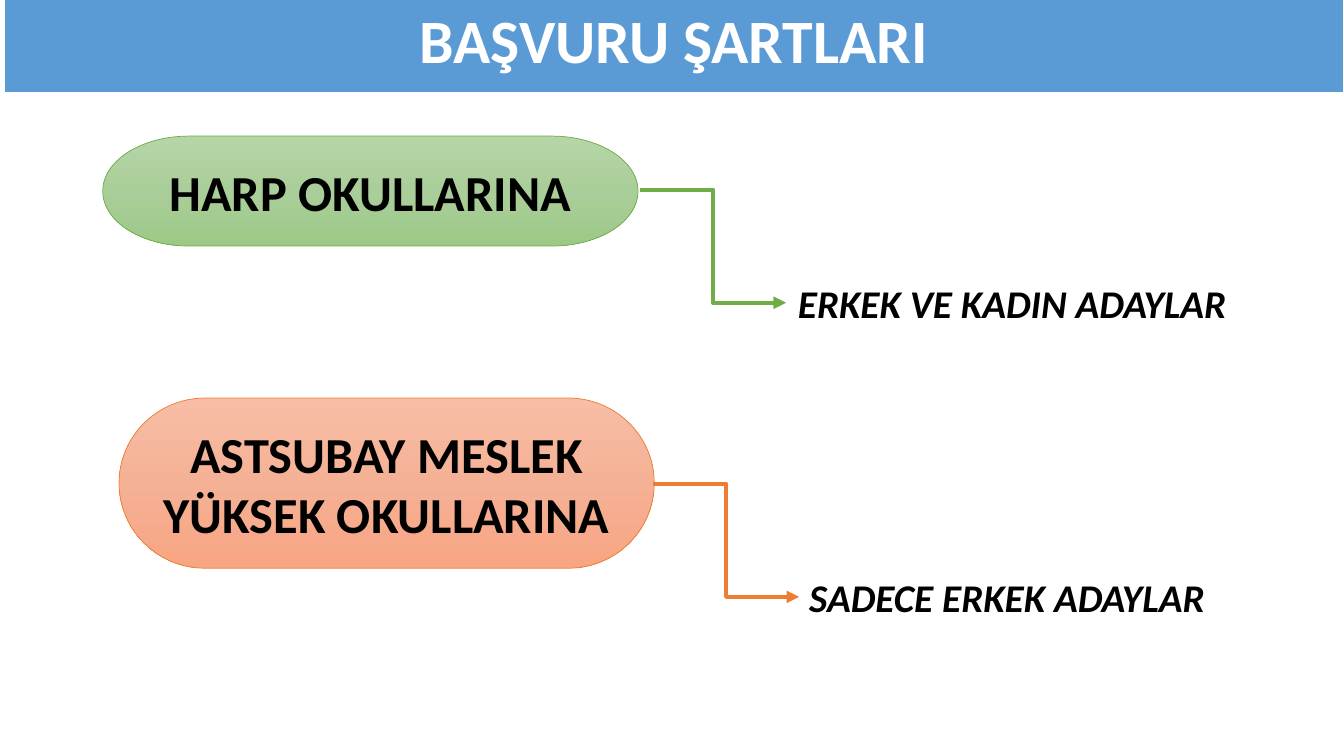
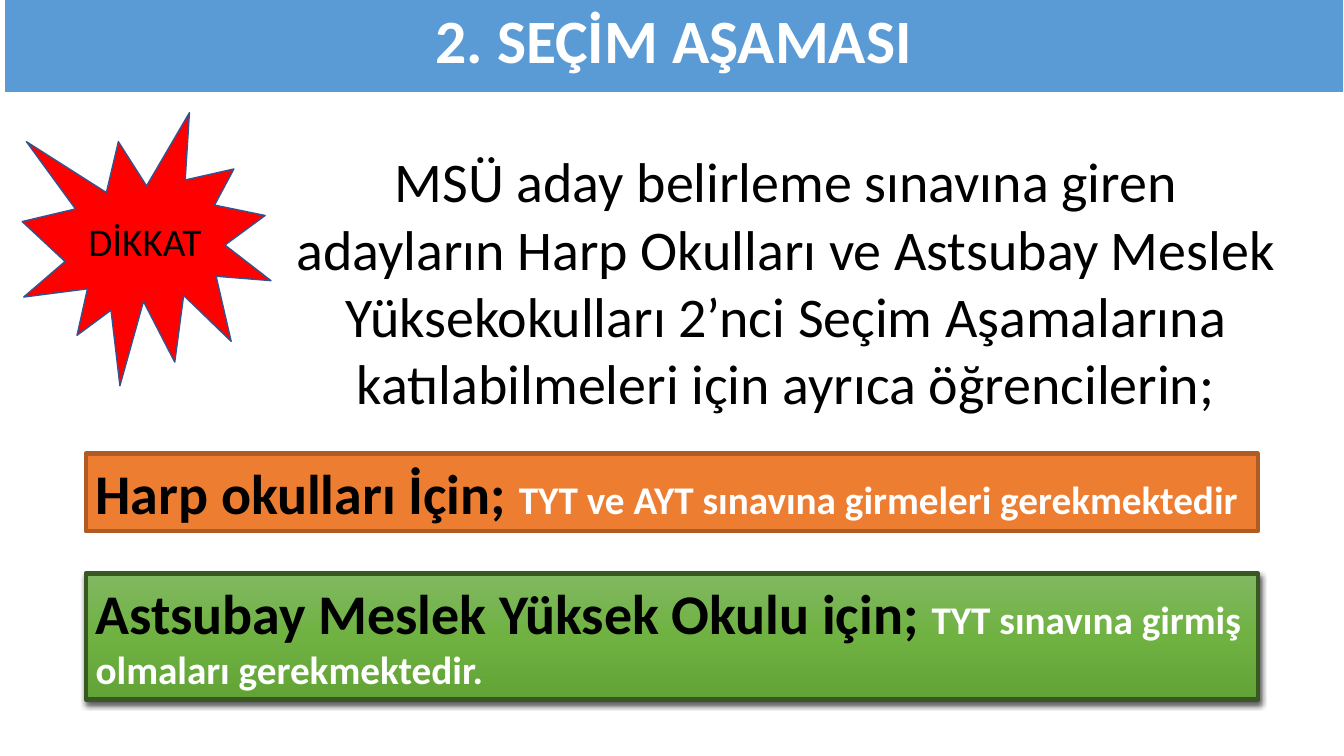
"""Builds two slides on the application terms and the second selection stage."""
from copy import deepcopy

from lxml.etree import SubElement
from pptx import Presentation
from pptx.dml.color import RGBColor
from pptx.enum.shapes import MSO_CONNECTOR, MSO_SHAPE
from pptx.enum.text import MSO_ANCHOR, MSO_AUTO_SIZE, PP_ALIGN
from pptx.oxml.ns import qn
from pptx.util import Cm, Pt

COLORS = {
    "white": "FFFFFF", "black": "000000", "blue": "5B9BD5", "navy": "325491",
    "green": "70AD47", "dark_green": "385723", "orange": "ED7D31",
    "brown": "AF5C24", "red": "FF0000",
}
GRADIENTS = {
    "pale_green": ("B5D5A7", "AACE9A", "9CC987"),
    "pale_orange": ("F7BDA5", "F5B196", "F8A582"),
    "deep_green": ("81B861", "6FB242", "62A336"),
}
FORMATS = {
    "title": {"size": Pt(44), "bold": True},
    "school": {"size": Pt(36), "bold": True},
    "candidates": {"size": Pt(28), "bold": True, "italic": True},
    "body": {"size": Pt(40)},
    "lead": {"size": Pt(40), "bold": True},
    "detail": {"size": Pt(28), "bold": True},
    "warning": {"size": Pt(28)},
}


def rgb(name):
    return RGBColor.from_string(COLORS[name])


class Deck:
    def __init__(self):
        self.prs = Presentation()
        self.prs.slide_width, self.prs.slide_height = Cm(33.87), Cm(19.05)
        self.slide = None

    def new_slide(self, title):
        self.slide = self.prs.slides.add_slide(self.prs.slide_layouts[6])
        band = self.shape(MSO_SHAPE.RECTANGLE, (0.1, -0.15, 33.77, 2.5), "blue", "white", 1.5)
        self.put_text(band, [(title, "title", "white")], spacing=0.9)

    def put_text(self, holder, runs, align=PP_ALIGN.CENTER, anchor=MSO_ANCHOR.MIDDLE,
                 grow=False, spacing=None):
        frame = holder.text_frame
        frame.word_wrap = True
        frame.vertical_anchor = anchor
        if grow:
            frame.auto_size = MSO_AUTO_SIZE.SHAPE_TO_FIT_TEXT
        paragraph = frame.paragraphs[0]
        paragraph.alignment = align
        paragraph.line_spacing = spacing
        for text, style, color in runs:
            run = paragraph.add_run()
            run.text = text
            run.font.color.rgb = rgb(color)
            for key, value in {"name": "Calibri", **FORMATS[style]}.items():
                setattr(run.font, key, value)

    def shape(self, kind, box, fill, line, width):
        shape = self.slide.shapes.add_shape(kind, *map(Cm, box))
        shape.shadow.inherit = False
        if fill in GRADIENTS:
            self.gradient(shape, GRADIENTS[fill])
        else:
            shape.fill.solid()
            shape.fill.fore_color.rgb = rgb(fill)
        shape.line.color.rgb = rgb(line)
        shape.line.width = Pt(width)
        return shape

    def gradient(self, shape, hexes):
        shape.fill.gradient()
        shape.fill.gradient_angle = 270
        stops = next(shape.element.iter(qn("a:gsLst")))
        stops.insert(1, deepcopy(stops[0]))
        for index, (stop, color) in enumerate(zip(shape.fill.gradient_stops, hexes)):
            stop.color.rgb = RGBColor.from_string(color)
            stop.position = index / 2

    def shadow(self, shape):
        effects = shape.element.spPr.find(qn("a:effectLst"))
        outer = SubElement(effects, qn("a:outerShdw"), blurRad=str(Pt(4.5)),
                           dist=str(Pt(1.5)), dir="5400000", algn="ctr", rotWithShape="0")
        color = SubElement(outer, qn("a:srgbClr"), val=COLORS["black"])
        SubElement(color, qn("a:alpha"), val="63000")

    def text(self, box, text, style, align=PP_ALIGN.LEFT):
        holder = self.slide.shapes.add_textbox(*map(Cm, box))
        self.put_text(holder, [(text, style, "black")], align, MSO_ANCHOR.TOP, grow=True)

    def school(self, box, name, fill, line):
        pill = self.shape(MSO_SHAPE.FLOWCHART_TERMINATOR, box, fill, line, 0.5)
        self.put_text(pill, [(name, "school", "black")])

    def arrow(self, left, top, color):
        arrow = self.slide.shapes.add_connector(
            MSO_CONNECTOR.ELBOW, Cm(left), Cm(top), Cm(left + 3.68), Cm(top + 2.85))
        arrow.line.color.rgb = rgb(color)
        arrow.line.width = Pt(3)
        properties = arrow.element.spPr
        SubElement(properties.find(qn("a:ln")), qn("a:tailEnd"), type="triangle")
        SubElement(properties, qn("a:effectLst"))

    def requirement(self, top, height, lead, detail, fill, line):
        panel = self.shape(MSO_SHAPE.RECTANGLE, (2.16, top, 29.54, height), fill, line, 3)
        self.put_text(panel, [(lead, "lead", "black"), (detail, "detail", "white")],
                      PP_ALIGN.LEFT, MSO_ANCHOR.TOP, grow=True)
        return panel


def main():
    deck = Deck()

    deck.new_slide("BAŞVURU ŞARTLARI")
    schools = [
        ((2.59, 3.43, 13.49, 2.77), "HARP OKULLARINA", "pale_green", "green",
         (16.13, 4.78), 19.86, "ERKEK VE KADIN ADAYLAR"),
        ((3, 10.03, 13.49, 4.29), "ASTSUBAY MESLEK YÜKSEK OKULLARINA", "pale_orange", "orange",
         (16.46, 12.19), 20.14, "SADECE ERKEK ADAYLAR"),
    ]
    for box, name, fill, line, start, label_left, candidates in schools:
        deck.school(box, name, fill, line)
        deck.arrow(*start, line)
        deck.text((label_left, start[1] + 2.13, 11.6, 1.45), candidates, "candidates")

    deck.new_slide("2. SEÇİM AŞAMASI")
    deck.text((7.09, 3.58, 25.43, 7.09),
              "MSÜ aday belirleme sınavına giren adayların Harp Okulları ve Astsubay Meslek "
              "Yüksekokulları 2’nci Seçim Aşamalarına katılabilmeleri için ayrıca öğrencilerin;",
              "body", PP_ALIGN.CENTER)
    college = deck.requirement(14.45, 3.18, "Astsubay Meslek Yüksek Okulu için; ",
                               "TYT sınavına girmiş olmaları gerekmektedir.",
                               "deep_green", "dark_green")
    deck.shadow(college)
    deck.requirement(11.43, 1.96, "Harp okulları İçin; ",
                     "TYT ve AYT sınavına girmeleri gerekmektedir", "orange", "brown")
    burst = deck.shape(MSO_SHAPE.EXPLOSION1, (0.56, 2.84, 6.27, 6.88), "red", "navy", 1)
    deck.put_text(burst, [("DİKKAT", "warning", "black")])

    deck.prs.save("out.pptx")


if __name__ == "__main__":
    main()
